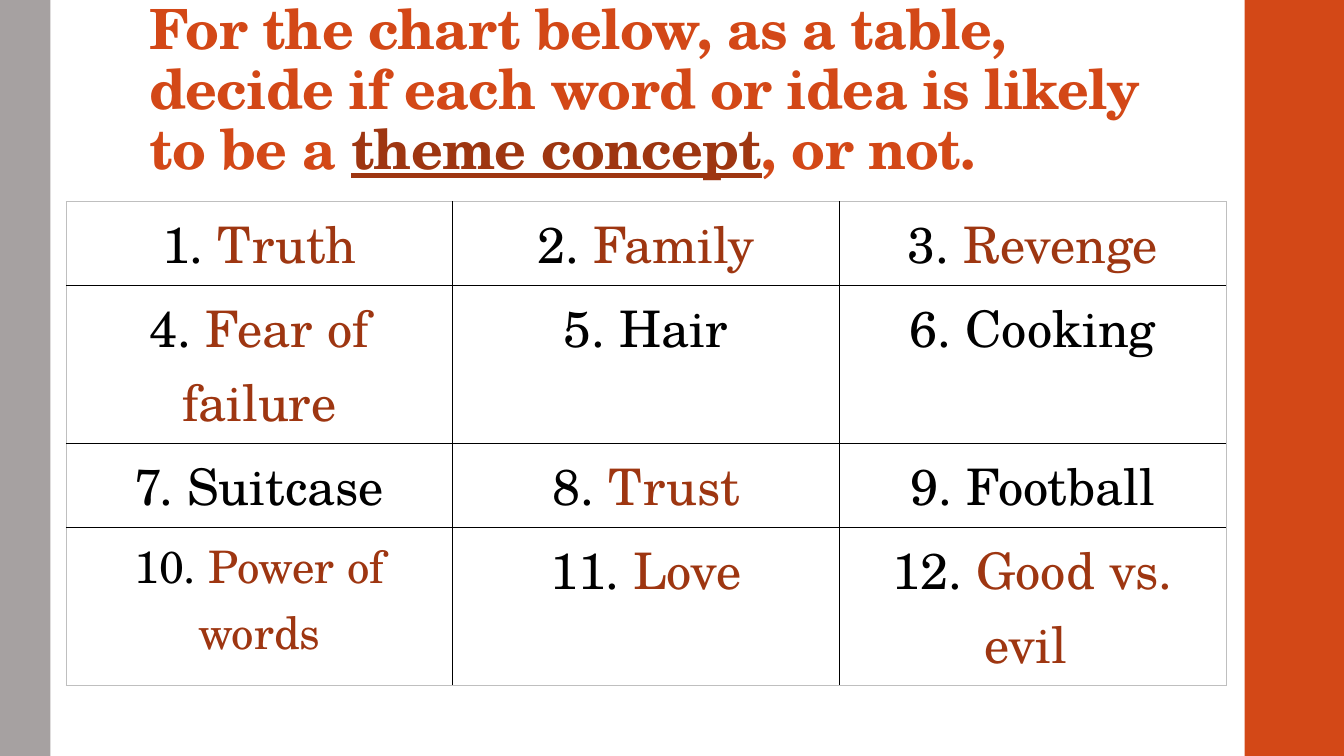
from dataclasses import dataclass

from lxml import etree
from pptx import Presentation
from pptx.dml.color import RGBColor as Rgb
from pptx.enum.shapes import MSO_SHAPE as Shape
from pptx.enum.text import MSO_ANCHOR as Anchor, PP_ALIGN as Align
from pptx.oxml.ns import qn
from pptx.util import Pt


@dataclass(frozen=True)
class Theme:
    font: str = "TeX Gyre Schola"
    orange: str = "D34817"
    rust: str = "9E3611"
    gray: str = "A6A1A1"
    edge: str = "BFBFBF"
    black: str = "000000"
    title: float = 39.6
    body: float = 36
    small: float = 32


THEME = Theme()

# Each entry: words, whether they are a theme concept, type size
IDEAS = [
    [("Truth", True, THEME.body), ("Family", True, THEME.body), ("Revenge", True, THEME.body)],
    [("Fear of failure", True, THEME.body), ("Hair", False, THEME.body), ("Cooking", False, THEME.body)],
    [("Suitcase", False, THEME.body), ("Trust", True, THEME.body), ("Football", False, THEME.body)],
    [("Power of words", True, THEME.small), ("Love", True, THEME.body), ("Good vs. evil ", True, THEME.body)],
]
HEIGHTS = [60, 113, 60, 113]
WIDTH = 276.2


def add_run(para, text, size, color):
    run = para.add_run()
    run.text = text
    run.font.name = THEME.font
    run.font.size = Pt(size)
    run.font.color.rgb = Rgb.from_string(color)
    return run


def add_bar(slide, left, width, color):
    bar = slide.shapes.add_shape(Shape.RECTANGLE, Pt(left), 0, Pt(width), Pt(540))
    bar.shadow.inherit = False
    bar.fill.solid()
    bar.fill.fore_color.rgb = Rgb.from_string(color)
    bar.line.fill.background()


def add_title(slide, parts):
    box = slide.shapes.add_textbox(Pt(99.4), Pt(23), Pt(763), Pt(110.2))
    frame = box.text_frame
    frame.word_wrap = True
    frame.vertical_anchor = Anchor.BOTTOM
    frame.margin_top = Pt(2.2)
    para = frame.paragraphs[0]
    para.line_spacing = 0.9
    for text, key in parts:
        run = add_run(para, text, THEME.title, THEME.rust if key else THEME.orange)
        run.font.bold = True
        run.font.underline = key
        run.font._element.set("spc", "-50")


def add_border(cell, side, color, width):
    props = cell._tc.get_or_add_tcPr()
    line = etree.SubElement(props, qn(f"a:ln{side}"), w=str(Pt(width)))
    fill = etree.SubElement(line, qn("a:solidFill"))
    etree.SubElement(fill, qn("a:srgbClr"), val=color)


def fill_cell(cell, number, idea):
    words, key, size = idea
    para = cell.text_frame.paragraphs[0]
    para.alignment = Align.CENTER
    add_run(para, f"{number}. ", size, THEME.black)
    add_run(para, words, size, THEME.rust if key else THEME.black)


def add_grid(slide, ideas):
    rows, cols = len(ideas), len(ideas[0])
    frame = slide.shapes.add_table(rows, cols, Pt(47.2), Pt(143.8),
                                   Pt(WIDTH * cols), Pt(sum(HEIGHTS)))
    table = frame.table
    table.first_row = table.horz_banding = False
    for col in table.columns:
        col.width = Pt(WIDTH)
    for r, items in enumerate(ideas):
        table.rows[r].height = Pt(HEIGHTS[r])
        for c, idea in enumerate(items):
            cell = table.cell(r, c)
            fill_cell(cell, r * cols + c + 1, idea)
            outer = {"L": c == 0, "R": c == cols - 1, "T": r == 0, "B": r == rows - 1}
            for side, edge in outer.items():
                add_border(cell, side, THEME.edge if edge else THEME.black,
                           0.5 if edge else 1)
            cell.fill.background()


def main():
    deck = Presentation()
    deck.slide_width, deck.slide_height = Pt(960), Pt(540)
    slide = deck.slides.add_slide(deck.slide_layouts[6])
    add_bar(slide, 889, 71, THEME.orange)
    add_bar(slide, 0, 36, THEME.gray)
    add_title(slide, [
        ("For the chart below, as a table, decide if each word or idea is likely to be a ", False),
        ("theme concept", True),
        (", or not.", False),
    ])
    add_grid(slide, IDEAS)
    deck.save("out.pptx")


if __name__ == "__main__":
    main()
